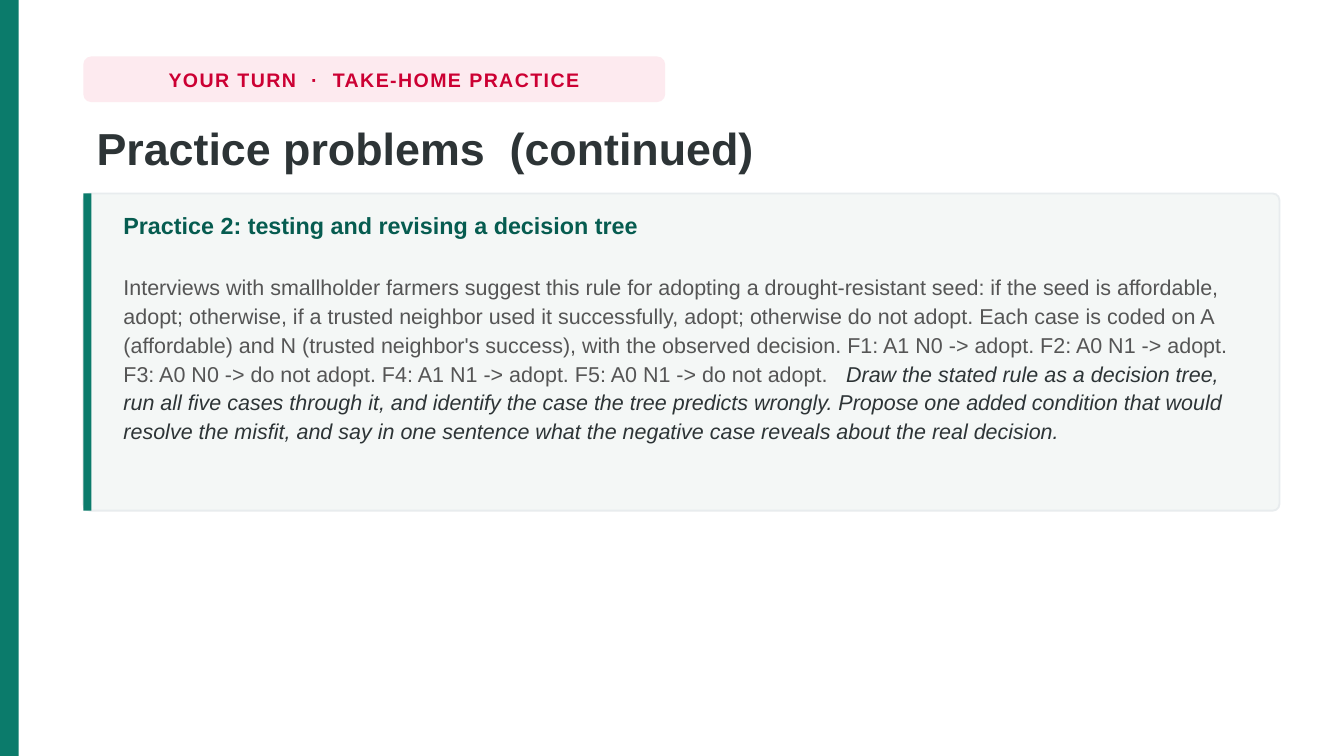
from pptx import Presentation
from pptx.dml.color import RGBColor
from pptx.enum.shapes import MSO_SHAPE
from pptx.enum.text import MSO_ANCHOR, PP_ALIGN
from pptx.util import Inches, Pt

RECT, ROUND = MSO_SHAPE.RECTANGLE, MSO_SHAPE.ROUNDED_RECTANGLE
TOP, MIDDLE = MSO_ANCHOR.TOP, MSO_ANCHOR.MIDDLE
LEFT, CENTER = PP_ALIGN.LEFT, PP_ALIGN.CENTER

LABEL = "YOUR TURN  ·  TAKE-HOME PRACTICE"
TITLE = "Practice problems  (continued)"
HEAD = "Practice 2: testing and revising a decision tree"
CASE = (
    "Interviews with smallholder farmers suggest this rule for adopting a "
    "drought-resistant seed: if the seed is affordable, adopt; otherwise, if a "
    "trusted neighbor used it successfully, adopt; otherwise do not adopt. Each "
    "case is coded on A (affordable) and N (trusted neighbor's success), with the "
    "observed decision. F1: A1 N0 -> adopt. F2: A0 N1 -> adopt. F3: A0 N0 -> do "
    "not adopt. F4: A1 N1 -> adopt. F5: A0 N1 -> do not adopt."
)
TASK = (
    "Draw the stated rule as a decision tree, run all five cases through it, and "
    "identify the case the tree predicts wrongly. Propose one added condition that "
    "would resolve the misfit, and say in one sentence what the negative case "
    "reveals about the real decision."
)

THEME = {
    "font": "Arial",
    "green": "0B7B6B", "deep": "065C50", "red": "CC0033", "pink": "FDEAEF",
    "ink": "2D3436", "grey": "555555", "card": "F4F7F6", "edge": "E8ECEE",
    "label": 10.5, "title": 24, "head": 12.5, "body": 11.5,
}

WIDE = 10
HIGH = WIDE * 9 / 16
EDGE, SPAN = 0.62, 8.9
PILL = (EDGE, 0.42, 4.33, 0.34)
CARD = (EDGE, 1.44, SPAN, 2.36)
PAD_X, PAD_Y = 0.2, 0.08


def color(name):
    return RGBColor.from_string(THEME[name])


def add_box(slide, area, fill, line=None, radius=0):
    box = slide.shapes.add_shape(ROUND if radius else RECT, *map(Inches, area))
    if radius:
        box.adjustments[0] = radius / min(area[2:])
    box.shadow.inherit = False
    box.fill.solid()
    box.fill.fore_color.rgb = color(fill)
    if line:
        box.line.color.rgb = color(line)
        box.line.width = Pt(1)
    else:
        box.line.fill.background()


def add_text(slide, area, paras, align=LEFT, anchor=TOP, wrap=True,
             lead=None, gap=0, inset=0.05):
    frame = slide.shapes.add_textbox(*map(Inches, area)).text_frame
    frame.word_wrap = wrap
    frame.vertical_anchor = anchor
    frame.margin_top = Inches(inset)
    for i, runs in enumerate(paras):
        para = frame.paragraphs[0] if i == 0 else frame.add_paragraph()
        para.alignment = align
        if lead:
            para.line_spacing = lead
        if i:
            para.space_before = Pt(gap)
        for text, look in runs:
            run = para.add_run()
            run.text = text
            font = run.font
            font.name = THEME["font"]
            font.size = Pt(THEME[look["size"]])
            font.color.rgb = color(look["color"])
            font.bold = look.get("bold", False)
            font.italic = look.get("slant", False)
            if "track" in look:
                run._r.get_or_add_rPr().set("spc", str(round(look["track"] * 100)))


deck = Presentation()
deck.slide_width, deck.slide_height = Inches(WIDE), Inches(HIGH)
slide = deck.slides.add_slide(deck.slide_layouts[6])

add_box(slide, (0, 0, 0.14, HIGH), "green")

add_box(slide, PILL, "pink", radius=0.06)
mark = dict(size="label", color="red", bold=True, track=0.8)
add_text(slide, PILL, [[(LABEL, mark)]], align=CENTER, anchor=MIDDLE, wrap=False)

name = dict(size="title", color="ink", bold=True)
add_text(slide, (EDGE, 0.84, SPAN, 0.56), [[(TITLE, name)]], lead=1.02)

left, top, width, height = CARD
add_box(slide, CARD, "card", line="edge", radius=0.05)
add_box(slide, (left, top, 0.06, height), "green")
inner = (left + PAD_X, top + PAD_Y, width - 2 * PAD_X - 0.02, height - 2 * PAD_Y)
plain = dict(size="body", color="grey")
paras = [
    [(HEAD, dict(size="head", color="deep", bold=True))],
    [
        (CASE, plain),
        (" ", dict(plain, track=6.4)),
        (TASK, dict(size="body", color="ink", slant=True)),
    ],
]
add_text(slide, inner, paras, lead=1.12, gap=16.8, inset=0.03)

deck.save("out.pptx")
